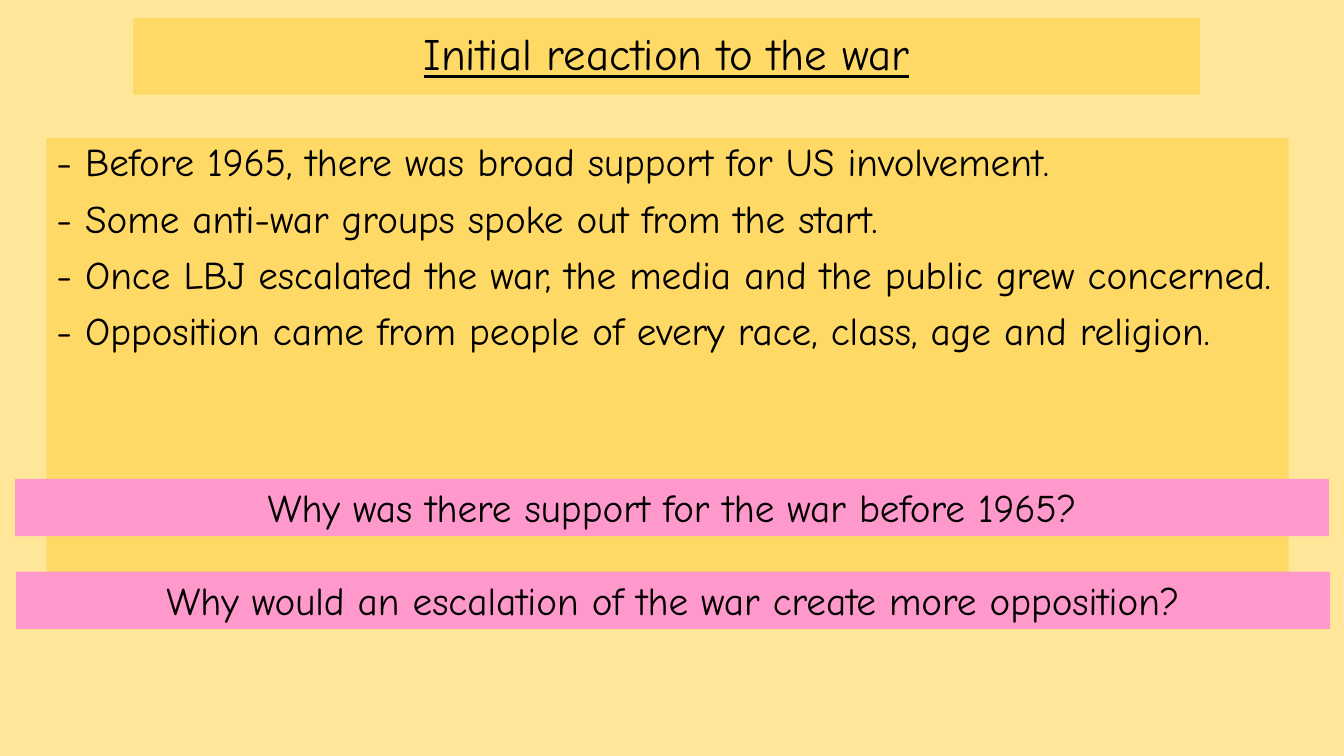
from pptx import Presentation
from pptx.dml.color import RGBColor
from pptx.enum.shapes import MSO_SHAPE as SHAPE
from pptx.enum.text import MSO_ANCHOR as ANCHOR, PP_ALIGN as ALIGN
from pptx.util import Inches, Pt

TITLE = "Initial reaction to the war"
POINTS = [
    "- Before 1965, there was broad support for US involvement.",
    "- Some anti-war groups spoke out from the start.",
    "- Once LBJ escalated the war, the media and the public grew concerned.",
    "- Opposition came from people of every race, class, age and religion.",
]
QUESTIONS = [
    "Why was there support for the war before 1965?",
    "Why would an escalation of the war create more opposition?",
]
FONT = "Comic Neue"
CREAM, GOLD, PINK, BLACK = "FFE699", "FFD966", "FF99CC", "000000"
QUESTION_LEFT, QUESTION_TOP = 0.15, 4.75
STEP_X, STEP_Y = 0.01, 0.92

TITLE_FORMAT = {"alignment": ALIGN.CENTER, "line_spacing": 0.9}
POINT_FORMAT = {"alignment": ALIGN.LEFT, "line_spacing": 0.9, "space_before": Pt(10)}
QUESTION_FORMAT = {"alignment": ALIGN.CENTER}


def paint(fill, color):
    fill.solid()
    fill.fore_color.rgb = RGBColor.from_string(color)


def set_all(target, values):
    for name, value in values.items():
        setattr(target, name, value)


def add_panel(slide, box, color, lines, para_format, size=28, anchor=ANCHOR.TOP, underline=False):
    """Add a filled rectangle holding one paragraph per line."""
    sp = slide.shapes.add_shape(SHAPE.RECTANGLE, *map(Inches, box))
    sp.shadow.inherit = False
    paint(sp.fill, color)
    sp.line.fill.background()
    tf = sp.text_frame
    set_all(tf, {"word_wrap": True, "vertical_anchor": anchor})
    for i, line in enumerate(lines):
        p = tf.paragraphs[0] if i == 0 else tf.add_paragraph()
        set_all(p, para_format)
        r = p.add_run()
        r.text = line
        set_all(r.font, {"name": FONT, "size": Pt(size), "underline": underline})
        paint(r.font.fill, BLACK)


def main():
    prs = Presentation()
    set_all(prs, {"slide_width": Inches(13.33), "slide_height": Inches(7.5)})
    slide = prs.slides.add_slide(prs.slide_layouts[6])
    paint(slide.background.fill, CREAM)

    add_panel(slide, (1.32, 0.18, 10.58, 0.76), GOLD, [TITLE], TITLE_FORMAT,
              size=32, anchor=ANCHOR.MIDDLE, underline=True)
    add_panel(slide, (0.46, 1.37, 12.32, 4.76), GOLD, POINTS, POINT_FORMAT)
    for i, question in enumerate(QUESTIONS):
        box = (QUESTION_LEFT + i * STEP_X, QUESTION_TOP + i * STEP_Y, 13.03, 0.57)
        add_panel(slide, box, PINK, [question], QUESTION_FORMAT)

    prs.save("out.pptx")


if __name__ == "__main__":
    main()
